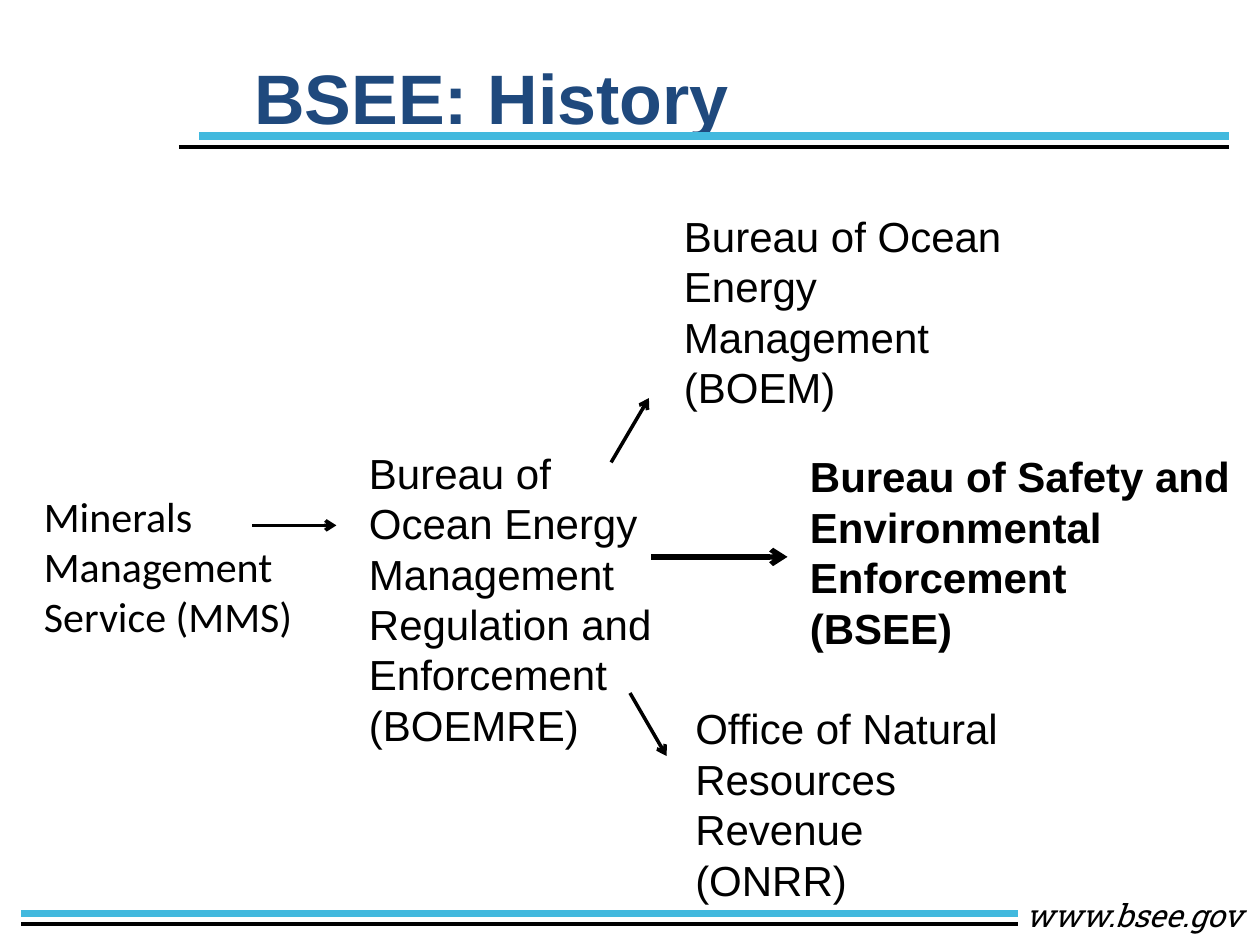
from lxml import etree
from pptx import Presentation
from pptx import util as u
from pptx.dml.color import RGBColor
from pptx.enum import shapes, text
from pptx.oxml.ns import qn

BLUE, BLACK, NAVY = "42B9DE", "000000", "1F497D"

deck = Presentation()
deck.slide_width, deck.slide_height = u.Inches(10), u.Inches(7.5)
page = deck.slides.add_slide(deck.slide_layouts[5])


def line(x1, y1, x2, y2, hue, width, arrow=False):
    ends = [u.Inches(v) for v in (x1, y1, x2, y2)]
    rule = page.shapes.add_connector(shapes.MSO_CONNECTOR.STRAIGHT, *ends)
    rule.line.color.rgb = RGBColor.from_string(hue)
    rule.line.width = u.Pt(width)
    props = rule._element.spPr
    if arrow:
        etree.SubElement(props.find(qn("a:ln")), qn("a:tailEnd"), type="arrow")
    etree.SubElement(props, qn("a:effectLst"))


def label(x, y, w, h, rows, size=24, face="Arial", bold=False, slant=False):
    box = page.shapes.add_textbox(*[u.Inches(v) for v in (x, y, w, h)])
    frame = box.text_frame
    frame.word_wrap = True
    frame.text = "\n".join(rows)
    for para in frame.paragraphs:
        para.line_spacing = u.Pt(size * 1.2)
        font = para.font
        font.name, font.size = face, u.Pt(size)
        font.bold, font.italic = bold, slant
        font.color.rgb = RGBColor.from_string(BLACK)


# Double rules at the head and foot
for left, right, y, hue, width in [
    (1.58, 9.75, 1.08, BLUE, 4.5),
    (1.42, 9.75, 1.17, BLACK, 2.25),
    (0.17, 8.08, 7.25, BLUE, 4.5),
    (0.17, 8.08, 7.33, BLACK, 2.25),
]:
    line(left, y, right, y, hue, width)

# Web address
label(8.04, 7.06, 2, 0.4, ["www.bsee.gov"], 18, "Roboto Slab", slant=True)

# Title
title = page.shapes.title
title.left, title.top = u.Inches(0.42), u.Inches(0.33)
title.width, title.height = u.Inches(9.17), u.Inches(0.58)
frame = title.text_frame
frame.text = "BSEE: History"
frame.auto_size = text.MSO_AUTO_SIZE.NONE
frame.vertical_anchor = text.MSO_ANCHOR.TOP
frame.margin_left, frame.margin_top = u.Inches(1.6), u.Inches(0.1)
head = frame.paragraphs[0]
head.alignment = text.PP_ALIGN.LEFT
head.font.name, head.font.size, head.font.bold = "Arial", u.Pt(40), True
head.font.color.rgb = RGBColor.from_string(NAVY)

# Agencies, from the first to its successors
label(0.25, 3.84, 5, 1.31, ["Minerals", "Management", "Service (MMS)"],
      face="Calibri")
label(2.83, 3.5, 2.56, 2.52, ["Bureau of", "Ocean Energy", "Management",
                              "Regulation and", "Enforcement", "(BOEMRE)"])
label(5.33, 1.62, 2.83, 1.72,
      ["Bureau of Ocean", "Energy Management", "(BOEM)"])
label(6.33, 3.53, 3.66, 1.72, ["Bureau of Safety and", "Environmental",
                               "Enforcement", "(BSEE)"], bold=True)
label(5.42, 5.53, 2.83, 1.72,
      ["Office of Natural", "Resources Revenue", "(ONRR)"])

# Arrows between agencies
for x1, y1, x2, y2, width in [
    (2, 4.17, 2.67, 4.17, 2),
    (4.85, 3.67, 5.15, 3.16, 2),
    (5.17, 4.42, 6.25, 4.42, 3),
    (5, 5.5, 5.29, 6, 2),
]:
    line(x1, y1, x2, y2, BLACK, width, arrow=True)

deck.save("out.pptx")
